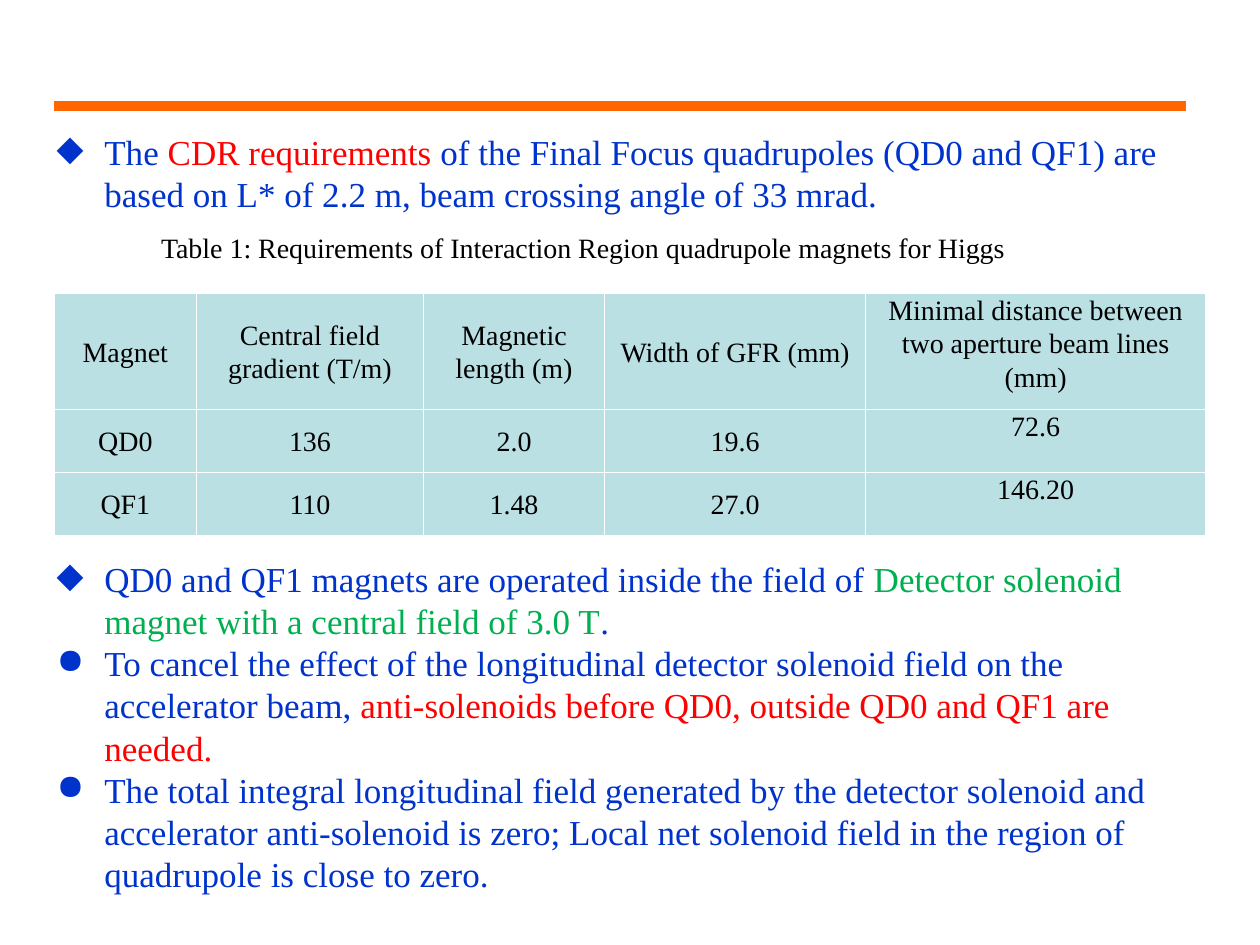
from lxml import etree
from pptx import Presentation
from pptx.dml.color import RGBColor
from pptx.enum.shapes import MSO_CONNECTOR
from pptx.enum.text import MSO_ANCHOR, PP_ALIGN
from pptx.oxml.ns import qn
from pptx.util import Inches, Pt

STRAIGHT = MSO_CONNECTOR.STRAIGHT
TOP, MIDDLE = MSO_ANCHOR.TOP, MSO_ANCHOR.MIDDLE
LEFT, CENTER = PP_ALIGN.LEFT, PP_ALIGN.CENTER

BLUE = RGBColor(0x00, 0x33, 0xCC)
RED = RGBColor(0xFF, 0x00, 0x00)
GREEN = RGBColor(0x00, 0xB0, 0x50)
ORANGE = RGBColor(0xFF, 0x66, 0x00)
BLACK = RGBColor(0x00, 0x00, 0x00)
TEAL = RGBColor(0xBB, 0xE0, 0xE3)
BORDER = "FFFFFF"

DIAMOND, DISC = "◆", "●"
TABLE_GAP = 196  # points left free in the body for the caption and table

BODY = [
    (DIAMOND, 0, [
        ("The ", BLUE),
        ("CDR requirements ", RED),
        ("of the Final Focus quadrupoles (QD0 and QF1) are based on L* of 2.2 m, "
         "beam crossing angle of 33 mrad.", BLUE)]),
    (DIAMOND, TABLE_GAP, [
        ("QD0 and QF1 magnets are operated inside the field of ", BLUE),
        ("Detector solenoid magnet with a central field of 3.0 T", GREEN),
        (".", BLUE)]),
    (DISC, 0, [
        ("To cancel the effect of the longitudinal detector solenoid field on the "
         "accelerator beam, ", BLUE),
        ("anti-solenoids before QD0, outside QD0 and QF1 are needed.", RED)]),
    (DISC, 0, [
        ("The total integral longitudinal field generated by the detector solenoid and "
         "accelerator anti-solenoid is zero; Local net solenoid field in the region of "
         "quadrupole is close to zero.", BLUE)]),
]

MAGNETS = [
    ["Magnet", "Central field gradient (T/m)", "Magnetic length (m)",
     "Width of GFR (mm)", "Minimal distance between two aperture beam lines (mm)"],
    ["QD0", "136", "2.0", "19.6", "72.6"],
    ["QF1", "110", "1.48", "27.0", "146.20"],
]


def write(para, spans, size=16, align=LEFT, before=0, after=0, spacing=None, bullet=None):
    """Fill a paragraph with (text, colour) spans."""
    para.alignment = align
    para.space_before, para.space_after = Pt(before), Pt(after)
    para.line_spacing = spacing
    if bullet:
        properties = para._p.get_or_add_pPr()
        properties.set("marL", str(Inches(0.38)))
        properties.set("indent", str(-Inches(0.38)))
        etree.SubElement(properties, qn("a:buChar")).set("char", bullet)
    for text, color in spans:
        span = para.add_run()
        span.text = text
        span.font.name = "Times New Roman"
        span.font.size = Pt(size)
        span.font.color.rgb = color


class Slide:
    def __init__(self, deck):
        self.page = deck.slides.add_slide(deck.slide_layouts[6])

    def rule(self, left, right, top, width, color):
        line = self.page.shapes.add_connector(
            STRAIGHT, Inches(left), Inches(top), Inches(right), Inches(top))
        line.line.color.rgb = color
        line.line.width = Pt(width)
        etree.SubElement(line._element.spPr, qn("a:effectLst"))

    def text(self, left, top, width, height):
        box = self.page.shapes.add_textbox(
            Inches(left), Inches(top), Inches(width), Inches(height))
        box.text_frame.word_wrap = True
        return box.text_frame

    def bullets(self, items, *place):
        frame = self.text(*place)
        for index, (bullet, before, spans) in enumerate(items):
            para = frame.add_paragraph() if index else frame.paragraphs[0]
            write(para, spans, size=20, before=before, spacing=Pt(24), bullet=bullet)

    def table(self, rows, left, top, widths, heights):
        table = self.page.shapes.add_table(
            len(rows), len(widths), Inches(left), Inches(top),
            Inches(sum(widths)), Inches(sum(heights))).table
        for column, width in zip(table.columns, widths):
            column.width = Inches(width)
        for row, height in zip(table.rows, heights):
            row.height = Inches(height)
        for r, values in enumerate(rows):
            for c, value in enumerate(values):
                self.cell(table.cell(r, c), value, last=c == len(values) - 1)

    def cell(self, cell, value, last):
        # The last column is set at the top, the others in the middle
        side, edge = (0.07, 0) if last else (0, 0.06)
        cell.margin_left = cell.margin_right = Inches(side)
        cell.margin_top = cell.margin_bottom = Inches(edge)
        cell.vertical_anchor = TOP if last else MIDDLE
        properties = cell._tc.get_or_add_tcPr()
        for name in ("lnL", "lnR", "lnT", "lnB"):
            border = etree.SubElement(properties, qn("a:" + name), w=str(Pt(1)))
            fill = etree.SubElement(border, qn("a:solidFill"))
            etree.SubElement(fill, qn("a:srgbClr"), val=BORDER)
        cell.fill.solid()
        cell.fill.fore_color.rgb = TEAL
        write(cell.text_frame.paragraphs[0], [(value, BLACK)],
              align=CENTER, after=8, spacing=1.07)


def main():
    deck = Presentation()
    deck.slide_width, deck.slide_height = Inches(10), Inches(7.5)
    slide = Slide(deck)

    # Body text, with room for the table
    slide.bullets(BODY, 0.35, 0.99, 9.21, 6.14)

    # Rule under the title area
    slide.rule(0.43, 9.41, 0.84, 6, ORANGE)

    # Caption and table
    caption = slide.text(1.18, 1.78, 8.23, 0.37)
    write(caption.paragraphs[0], [
        ("Table 1: Requirements of Interaction Region quadrupole magnets for Higgs", BLACK)])
    slide.table(MAGNETS, 0.43, 2.33, [1.13, 1.8, 1.44, 2.07, 2.7], [0.92, 0.5, 0.5])

    deck.save("out.pptx")


if __name__ == "__main__":
    main()
